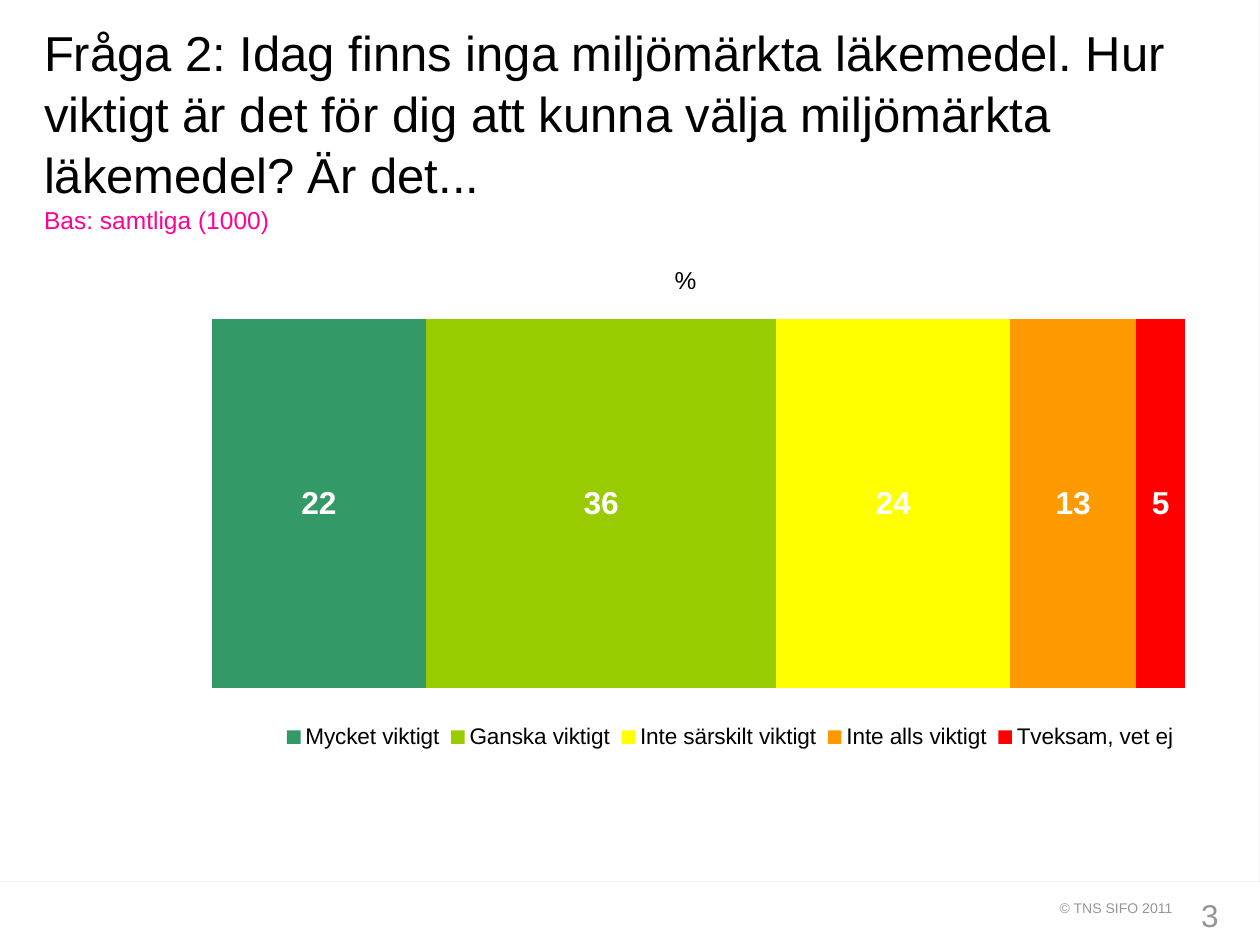
from dataclasses import dataclass

from lxml import etree
from pptx import Presentation
from pptx.chart.data import CategoryChartData
from pptx.dml.color import RGBColor
from pptx.enum.chart import XL_CHART_TYPE, XL_LEGEND_POSITION, XL_TICK_LABEL_POSITION, XL_TICK_MARK
from pptx.enum.text import MSO_ANCHOR, PP_ALIGN
from pptx.oxml.ns import qn
from pptx.util import Inches, Pt

STACKED = XL_CHART_TYPE.BAR_STACKED_100
RIGHT_LEGEND = XL_LEGEND_POSITION.RIGHT
NO_LABELS = XL_TICK_LABEL_POSITION.NONE
NO_TICK = XL_TICK_MARK.NONE
TOP, BOTTOM = MSO_ANCHOR.TOP, MSO_ANCHOR.BOTTOM
LEFT, RIGHT = PP_ALIGN.LEFT, PP_ALIGN.RIGHT


@dataclass(frozen=True)
class Theme:
    """Hold the colours and type sizes of the slide."""
    face: str = "Arial"
    ink: str = "000000"
    white: str = "FFFFFF"
    pink: str = "FF0099"
    grey: str = "969696"
    frame: str = "A6A6A6"
    title: float = 28
    base: float = 14
    value: float = 18.1
    legend: float = 12.9
    page: float = 18
    credit: float = 8


THEME = Theme()
ANSWERS = [
    ("Mycket viktigt", 22, "339966"),
    ("Ganska viktigt", 36, "99CC00"),
    ("Inte särskilt viktigt", 24, "FFFF00"),
    ("Inte alls viktigt", 13, "FF9900"),
    ("Tveksam, vet ej", 5, "FF0000"),
]


def style(font, size, color, bold=False):
    """Set the face, size, colour and weight of a font."""
    font.name = THEME.face
    font.size = Pt(size)
    font.bold = bold
    font.color.rgb = RGBColor.from_string(color)


def add_run(para, text, size, color):
    """Add one styled run to a paragraph."""
    run = para.add_run()
    run.text = text
    style(run.font, size, color)


def add_box(slide, box, inset=(0, 0), anchor=TOP, align=LEFT, wrap=True):
    """Add a text box and return its first paragraph."""
    frame = slide.shapes.add_textbox(*map(Inches, box)).text_frame
    frame.word_wrap = wrap
    frame.vertical_anchor = anchor
    frame.margin_left = frame.margin_right = Inches(inset[0])
    frame.margin_top = frame.margin_bottom = Inches(inset[1])
    para = frame.paragraphs[0]
    para.alignment = align
    return para


def add_frame(slide):
    """Draw the thin page frame with its cut corner."""
    outer = [(0.09, 0.34), (0.1, 0.29), (0.13, 0.25), (0.26, 0.11), (0.32, 0.08),
             (0.38, 0.07), (9.93, 0.07), (9.93, 7.43), (0.09, 7.43)]
    inner = [(0.11, 0.34), (0.11, 7.41), (9.91, 7.41), (9.91, 0.09), (0.38, 0.09),
             (0.32, 0.1), (0.27, 0.13), (0.14, 0.27), (0.12, 0.3)]
    build = slide.shapes.build_freeform(*outer[0], scale=Inches(1))
    build.add_line_segments(outer[1:], close=True)
    build.move_to(*inner[0])
    build.add_line_segments(inner[1:], close=True)
    shape = build.convert_to_shape()
    shape.shadow.inherit = False
    shape.fill.solid()
    shape.fill.fore_color.rgb = RGBColor.from_string(THEME.frame)
    shape.line.fill.background()


def place(part, index, inner=False, **spots):
    """Give a chart part a manual layout in fractions of the chart."""
    for old in part.findall(qn("c:layout")):
        part.remove(old)
    layout = etree.Element(qn("c:layout"))
    manual = etree.SubElement(layout, qn("c:manualLayout"))
    if inner:
        etree.SubElement(manual, qn("c:layoutTarget")).set("val", "inner")
    for name in ("xMode", "yMode"):
        etree.SubElement(manual, qn("c:" + name)).set("val", "edge")
    for name, spot in spots.items():
        etree.SubElement(manual, qn("c:" + name)).set("val", str(spot))
    part.insert(index, layout)


def style_axes(chart):
    """Hide the axes and set the unit above the bar."""
    chart.category_axis.visible = False
    chart.category_axis.reverse_order = True
    axis = chart.value_axis
    axis.has_major_gridlines = False
    axis.major_tick_mark = axis.minor_tick_mark = NO_TICK
    axis.tick_label_position = NO_LABELS
    axis.format.line.fill.background()
    title = axis.axis_title
    add_run(title.text_frame.paragraphs[0], "%", THEME.base, THEME.ink)
    place(title._element, 1, x=0.56, y=0.11)


def style_bars(plot):
    """Colour each part of the bar and label its value."""
    plot.gap_width = 40
    plot.overlap = 100
    for series, (_, _, color) in zip(plot.series, ANSWERS):
        series.format.fill.solid()
        series.format.fill.fore_color.rgb = RGBColor.from_string(color)
        labels = series.data_labels
        labels.show_value = True
        style(labels.font, THEME.value, THEME.white, True)


def add_bar(slide):
    """Add the stacked bar chart of the answers."""
    data = CategoryChartData()
    data.categories = ["1"]
    for name, value, _ in ANSWERS:
        data.add_series(name, [value])
    box = map(Inches, (0, 1.55, 9.5, 4.65))
    chart = slide.shapes.add_chart(STACKED, *box, data).chart
    style(chart.font, THEME.value, THEME.ink, True)
    chart.has_title = False
    style_axes(chart)
    style_bars(chart.plots[0])
    chart.has_legend = True
    chart.legend.position = RIGHT_LEGEND
    chart.legend.include_in_layout = False
    style(chart.legend.font, THEME.legend, THEME.ink)
    place(chart.legend._element, 1, x=0.23, y=0.89, w=0.76, h=0.07)
    area = chart._chartSpace.chart.plotArea
    place(area, 0, inner=True, x=0.177, y=0.086, w=0.813, h=0.881)


def main():
    """Build and save the slide."""
    deck = Presentation()
    deck.slide_width, deck.slide_height = Inches(10), Inches(7.5)
    slide = deck.slides.add_slide(deck.slide_layouts[6])
    page = add_box(slide, (9.27, 7.06, 0.5, 0.27), (0.1, 0.05), align=RIGHT)
    add_run(page, "3", THEME.page, THEME.grey)
    add_frame(slide)
    credit = add_box(slide, (8.41, 7.14, 0.92, 0.13), wrap=False)
    add_run(credit, "© TNS SIFO 2011", THEME.credit, THEME.grey)
    title = add_box(slide, (0.35, 0.21, 9.37, 1.65), anchor=BOTTOM)
    title.line_spacing = 1.04
    add_run(title, "Fråga 2: Idag finns inga miljömärkta läkemedel. Hur viktigt är det "
            "för dig att kunna välja miljömärkta läkemedel? Är det... ", THEME.title, THEME.ink)
    title.add_line_break()
    add_run(title, "Bas: samtliga (1000)", THEME.base, THEME.pink)
    add_bar(slide)
    deck.save("out.pptx")


if __name__ == "__main__":
    main()
